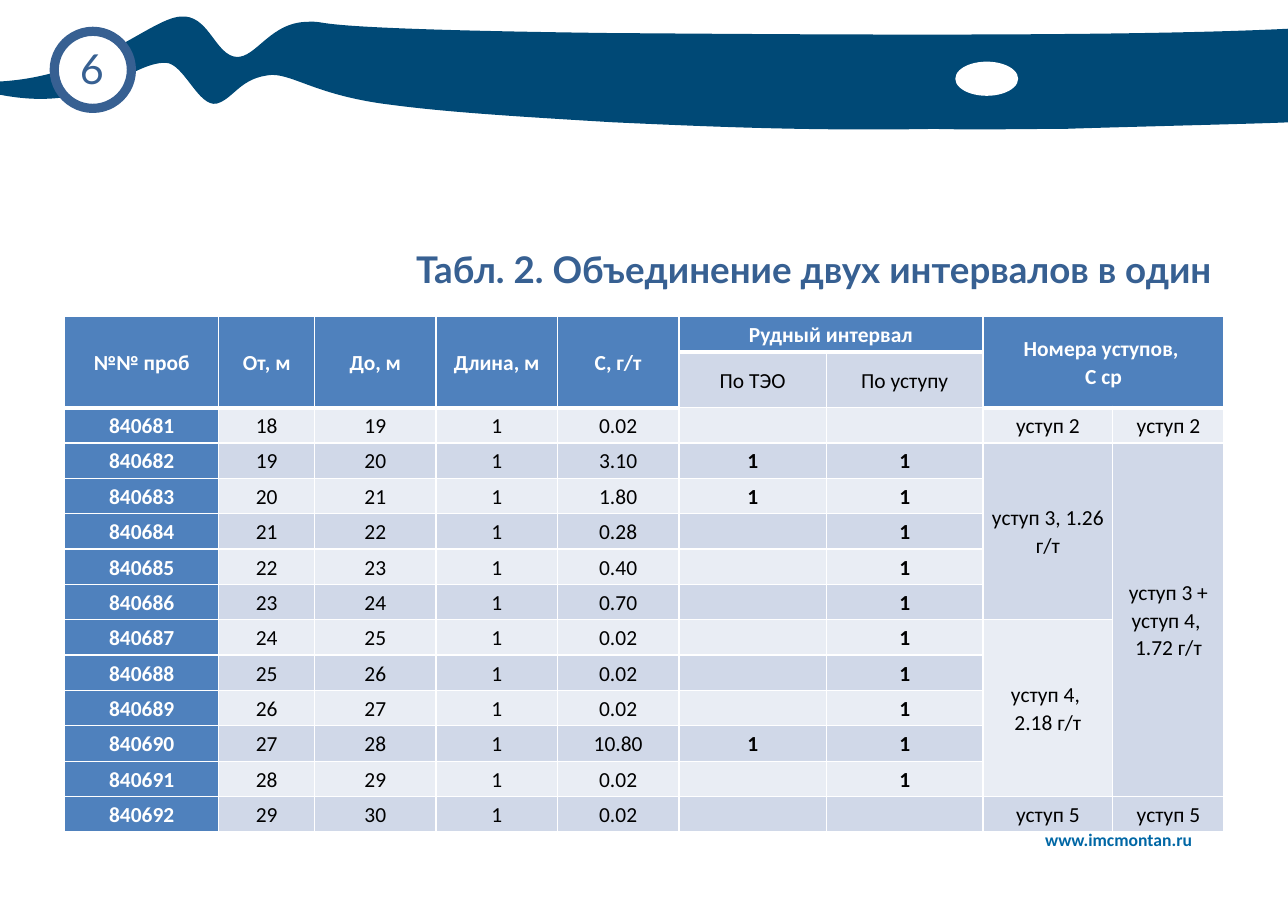
import pptx
import pptx.dml.color
import pptx.enum.shapes
import pptx.enum.text
import pptx.util
from pptx.oxml import parse_xml
from pptx.oxml.ns import nsdecls, qn

WIDTH, HEIGHT = pptx.util.Inches(11.69), pptx.util.Inches(8.27)
WHITE, BLACK, NAVY, BLUE = "FFFFFF", "000000", "004976", "376092"
HEADER, LIGHT, DARK = "4F81BD", "E9EDF4", "D0D8E8"
ALIGN = pptx.enum.text.PP_ALIGN
MIDDLE = pptx.enum.text.MSO_ANCHOR.MIDDLE

# Table grid, in percent of the slide
COLUMNS = [11.98, 7.44, 9.42, 9.43, 9.43, 11.46, 12.15, 10.09, 8.64]
ROW, SUBHEADER_ROW = 3.88, 6.14

GRADES = ["0.02", "3.10", "1.80", "0.28", "0.40", "0.70",
          "0.02", "0.02", "0.02", "10.80", "0.02", "0.02"]
STUDY_ORE = {1, 2, 9}
BENCH_ORE = range(1, 11)
BENCHES = {0: ("уступ 2", "уступ 2"),
           1: ("уступ 3, 1.26 г/т", "уступ 3 + уступ 4, \v1.72 г/т"),
           6: ("уступ 4, \v2.18 г/т", ""),
           11: ("уступ 5", "уступ 5")}
# First row, first column, last row, last column
MERGES = [(0, column, 1, column) for column in range(5)]
MERGES += [(0, 5, 0, 6), (0, 7, 1, 8), (3, 7, 7, 7), (8, 7, 12, 7), (3, 8, 12, 8)]

# Ribbon: start point, then curves of two handles and an end point, in inches
RIBBON_START = (0, 0.86)
RIBBON_CURVES = [
    (0, 0.77, 0, 0.79, 0, 0.74),
    (0.88, 0.69, 1.36, 0.17, 1.64, 0.15),
    (1.88, 0.13, 1.94, 0.45, 2.11, 0.51),
    (2.3, 0.57, 2.42, 0.23, 2.75, 0.2),
    (3.1, 0.18, 2.43, 0.26, 5.54, 0.3),
    (7.03, 0.31, 10.13, 0.34, 11.71, 0.26),
    (11.72, 0.5, 11.7, 1.11, 11.7, 1.11),
    (11.56, 1.12, 9.9, 1.16, 9.66, 1.17),
    (9.25, 1.17, 8.87, 1.18, 8.48, 1.17),
    (7.35, 1.19, 6.44, 1.15, 5.56, 1.11),
    (4.73, 1.06, 4.06, 1.02, 3.54, 0.95),
    (2.89, 0.87, 2.67, 0.68, 2.47, 0.68),
    (2.18, 0.7, 2.13, 0.89, 1.97, 0.94),
    (1.8, 0.98, 1.67, 0.57, 1.5, 0.57),
    (1.17, 0.57, 0.87, 1.03, 0, 0.86),
]


def color(value):
    return pptx.dml.color.RGBColor.from_string(value)


def across(percent):
    return round(WIDTH * percent / 100)


def down(percent):
    return round(HEIGHT * percent / 100)


def area(left, top, width, height):
    """Turn percents of the slide into lengths."""
    return across(left), down(top), across(width), down(height)


def write(frame, text, size=14, font="Calibri", ink=BLACK, bold=False,
          align=ALIGN.CENTER, spacing=None):
    """Fill the frame with one paragraph; a vertical tab breaks its line."""
    frame.word_wrap = True
    para = frame.paragraphs[0]
    para.text = text
    para.alignment = align
    para.line_spacing = spacing
    for span in para.runs:
        span.font.size = pptx.util.Pt(size)
        span.font.name = font
        span.font.bold = bold
        span.font.color.rgb = color(ink)
    for line_break in para._p.findall(qn("a:br")):
        line_break.append(parse_xml(f'<a:rPr {nsdecls("a")} sz="{round(size * 100)}"/>'))


def add_text(page, place, text, anchor=None, **style):
    box = page.shapes.add_textbox(*area(*place))
    if anchor is not None:
        box.text_frame.vertical_anchor = anchor
    write(box.text_frame, text, **style)


def paint(shape, fill, line=None, weight=0):
    shape.shadow.inherit = False
    shape.fill.solid()
    shape.fill.fore_color.rgb = color(fill)
    if line:
        shape.line.color.rgb = color(line)
        shape.line.width = pptx.util.Pt(weight)
    else:
        shape.line.fill.background()


def add_oval(page, place, **style):
    kind = pptx.enum.shapes.MSO_SHAPE.OVAL
    paint(page.shapes.add_shape(kind, *area(*place)), **style)


def emu_points(inches):
    """Pair up a flat list of coordinates."""
    lengths = [pptx.util.Inches(value) for value in inches]
    return list(zip(lengths[::2], lengths[1::2]))


def add_ribbon(page):
    curves = [emu_points(curve) for curve in RIBBON_CURVES]
    builder = page.shapes.build_freeform(*emu_points(RIBBON_START)[0])
    builder.add_line_segments([curve[-1] for curve in curves], close=True)
    ribbon = builder.convert_to_shape()
    for segment, curve in zip(list(ribbon._element.iter(qn("a:lnTo"))), curves):
        points = "".join(f'<a:pt x="{x - ribbon.left}" y="{y - ribbon.top}"/>'
                         for x, y in curve)
        segment.getparent().replace(segment, parse_xml(
            f'<a:cubicBezTo {nsdecls("a")}>{points}</a:cubicBezTo>'))
    paint(ribbon, NAVY)


def add_border(cell, side, weight):
    cell._tc.get_or_add_tcPr().append(parse_xml(
        f'<a:{side} {nsdecls("a")} w="{pptx.util.Pt(weight)}"><a:solidFill>'
        f'<a:srgbClr val="{WHITE}"/></a:solidFill></a:{side}>'))


def fill_cell(cell, text, fill, bottom=1, **style):
    cell.margin_left = cell.margin_right = pptx.util.Inches(0.07)
    cell.margin_top = cell.margin_bottom = 0
    cell.vertical_anchor = MIDDLE
    for side, weight in (("lnL", 1), ("lnR", 1), ("lnT", 1), ("lnB", bottom)):
        add_border(cell, side, weight)
    cell.fill.solid()
    cell.fill.fore_color.rgb = color(fill)
    if text:
        write(cell.text_frame, text, spacing=1.07, **style)


def table_rows():
    yield ["№№ проб", "От, м", "До, м", "Длина, м", "С, г/т", "Рудный интервал", "",
           "Номера уступов, \vС ср", ""]
    yield [""] * 5 + ["По ТЭО", "По уступу", "", ""]
    for index, grade in enumerate(GRADES):
        yield [str(840681 + index), str(18 + index), str(19 + index), "1", grade,
               "1" if index in STUDY_ORE else "", "1" if index in BENCH_ORE else "",
               *BENCHES.get(index, ("", ""))]


def add_samples_table(page):
    rows = list(table_rows())
    heights = [ROW, SUBHEADER_ROW] + [ROW] * len(GRADES)
    place = area(5.01, 34.74, sum(COLUMNS), sum(heights))
    table = page.shapes.add_table(len(rows), len(COLUMNS), *place).table
    for column, width in zip(table.columns, COLUMNS):
        column.width = across(width)
    for row, height in zip(table.rows, heights):
        row.height = down(height)
    for r, texts in enumerate(rows):
        for c, text in enumerate(texts):
            ore_column = c in (5, 6)
            heading = r == 0 or c == 0 or (r == 1 and not ore_column)
            fill = HEADER if heading else DARK if r % 2 else LIGHT
            thick = r == 0 or (r == 1 and not ore_column)
            fill_cell(table.cell(r, c), text, fill, bottom=3 if thick else 1,
                      ink=WHITE if heading else BLACK,
                      bold=heading or (ore_column and r > 1))
    for top, left, bottom, right in MERGES:
        table.cell(top, left).merge(table.cell(bottom, right))


def main():
    deck = pptx.Presentation()
    deck.slide_width, deck.slide_height = WIDTH, HEIGHT
    page = deck.slides.add_slide(deck.slide_layouts[6])
    add_ribbon(page)
    add_oval(page, (74.17, 6.77, 4.88, 3.75), fill=WHITE)
    add_text(page, (80.3, 90.4, 14.71, 3.51), "www.imcmontan.ru",
             size=11.5, ink="0067A5", bold=True, align=ALIGN.LEFT)
    add_oval(page, (4.21, 3.44, 5.99, 8.46), fill=WHITE, line=BLUE, weight=6)
    add_text(page, (2.48, 4.15, 9.32, 6.77), "6", size=27, font="Lato", ink=BLUE)
    add_text(page, (4.82, 26.5, 90.08, 6.05), "Табл. 2. Объединение двух интервалов в один",
             anchor=MIDDLE, size=24, font="Lato", ink=BLUE, bold=True, align=ALIGN.RIGHT)
    add_samples_table(page)
    deck.save("out.pptx")


if __name__ == "__main__":
    main()
